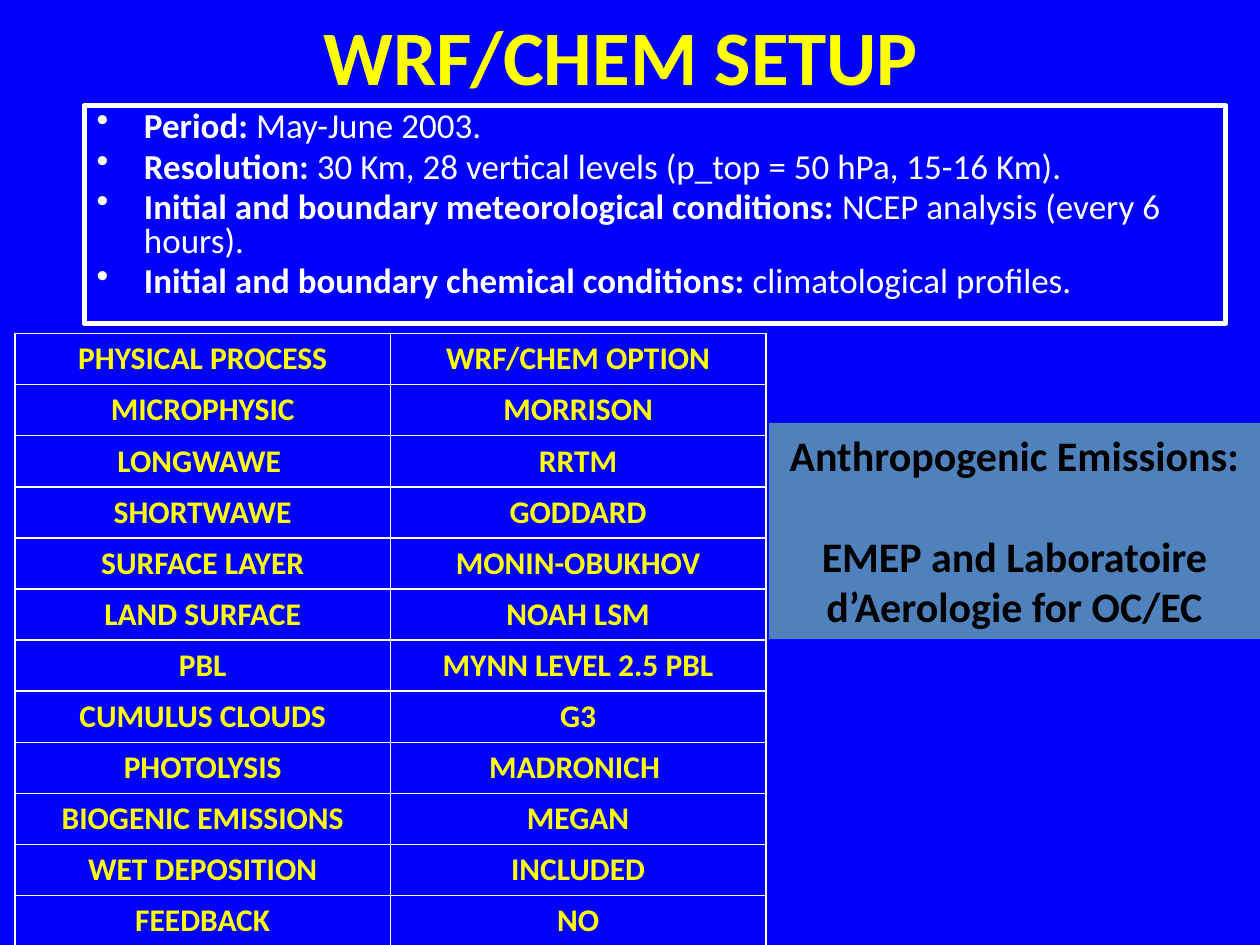
from lxml import etree
from pptx import Presentation
from pptx.dml.color import RGBColor
from pptx.enum import shapes, text
from pptx.oxml import ns
from pptx.util import Pt

COLORS = {name: RGBColor.from_string(value) for name, value in {
    "blue": "0000FF", "white": "FFFFFF", "yellow": "FFFF00",
    "steel": "4F81BD", "black": "000000"}.items()}


def style(paragraph, size, color, bold=None, align=None):
    paragraph.font.name = "Calibri"
    paragraph.font.size = Pt(size)
    paragraph.font.color.rgb = COLORS[color]
    paragraph.font.bold = bold
    paragraph.alignment = align


def add_cell_borders(cell, width=1):
    properties = cell._tc.get_or_add_tcPr()
    for index, side in enumerate(("a:lnL", "a:lnR", "a:lnT", "a:lnB")):
        line = etree.Element(ns.qn(side), w=str(Pt(width)))
        fill = etree.SubElement(line, ns.qn("a:solidFill"))
        etree.SubElement(fill, ns.qn("a:srgbClr"), val=str(COLORS["white"]))
        properties.insert(index, line)


CENTER = text.PP_ALIGN.CENTER

presentation = Presentation()
presentation.slide_width, presentation.slide_height = Pt(720), Pt(540)
slide = presentation.slides.add_slide(presentation.slide_layouts[6])
slide.background.fill.solid()
slide.background.fill.fore_color.rgb = COLORS["blue"]

# Simulation settings
settings = [
    ("Period:", "May-June 2003."),
    ("Resolution:", "30 Km, 28 vertical levels (p_top = 50 hPa, 15-16 Km)."),
    ("Initial and boundary meteorological conditions:",
     "NCEP analysis (every 6 hours)."),
    ("Initial and boundary chemical conditions:", "climatological profiles."),
]
setup = slide.shapes.add_shape(
    shapes.MSO_SHAPE.RECTANGLE, Pt(48.2), Pt(60.2), Pt(652.3), Pt(124.6))
setup.shadow.inherit = False
setup.fill.background()
setup.line.color.rgb = COLORS["white"]
setup.line.width = Pt(3)
setup.text_frame.word_wrap = True
setup.text_frame.vertical_anchor = text.MSO_ANCHOR.TOP
for index, (label, value) in enumerate(settings):
    setting = (setup.text_frame.add_paragraph() if index
               else setup.text_frame.paragraphs[0])
    style(setting, 20, "white", align=text.PP_ALIGN.LEFT)
    setting.line_spacing = 0.8
    setting.space_before = Pt(4)
    properties = setting._p.get_or_add_pPr()
    properties.set("marL", str(Pt(27)))
    properties.set("indent", str(Pt(-27)))
    bullet = etree.Element(ns.qn("a:buChar"), char="•")
    properties.find(ns.qn("a:defRPr")).addprevious(bullet)
    for words, bold in ((label + " ", True), (value, False)):
        run = setting.add_run()
        run.text = words
        run.font.bold = bold

# Title
title = slide.shapes.add_textbox(Pt(36), Pt(-13.7), Pt(648), Pt(90)).text_frame
title.word_wrap = True
title.vertical_anchor = text.MSO_ANCHOR.MIDDLE
title.text = "WRF/CHEM SETUP "
style(title.paragraphs[0], 44, "yellow", True, CENTER)

# Physics options
options = [
    ("PHYSICAL PROCESS", "WRF/CHEM OPTION"),
    ("MICROPHYSIC", "MORRISON"),
    ("LONGWAWE ", "RRTM"),
    ("SHORTWAWE", "GODDARD"),
    ("SURFACE LAYER", "MONIN-OBUKHOV"),
    ("LAND SURFACE", "NOAH LSM"),
    ("PBL", "MYNN LEVEL 2.5 PBL"),
    ("CUMULUS CLOUDS", "G3"),
    ("PHOTOLYSIS", "MADRONICH "),
    ("BIOGENIC EMISSIONS", "MEGAN"),
    ("WET DEPOSITION", "INCLUDED"),
    ("FEEDBACK", "NO"),
]
physics = slide.shapes.add_table(
    len(options), 2, Pt(8.6), Pt(190.6), Pt(429), Pt(29.2 * len(options))).table
for row, names in enumerate(options):
    for column, name in enumerate(names):
        cell = physics.cell(row, column)
        cell.text = name
        cell.fill.solid()
        cell.fill.fore_color.rgb = COLORS["blue"]
        style(cell.text_frame.paragraphs[0], 18, "yellow", True, CENTER)
        add_cell_borders(cell)

# Emission sources
emissions = slide.shapes.add_shape(
    shapes.MSO_SHAPE.RECTANGLE, Pt(439.4), Pt(241.7), Pt(280.6), Pt(123.6))
emissions.shadow.inherit = False
emissions.fill.solid()
emissions.fill.fore_color.rgb = COLORS["steel"]
emissions.line.fill.background()
emissions.text_frame.word_wrap = True
emissions.text_frame.vertical_anchor = text.MSO_ANCHOR.TOP
emissions.text_frame.text = (
    "Anthropogenic Emissions:\nEMEP and Laboratoire d’Aerologie for OC/EC")
for paragraph in emissions.text_frame.paragraphs:
    style(paragraph, 24, "black", True, CENTER)
emissions.text_frame.paragraphs[1].space_before = Pt(29)

presentation.save("out.pptx")
